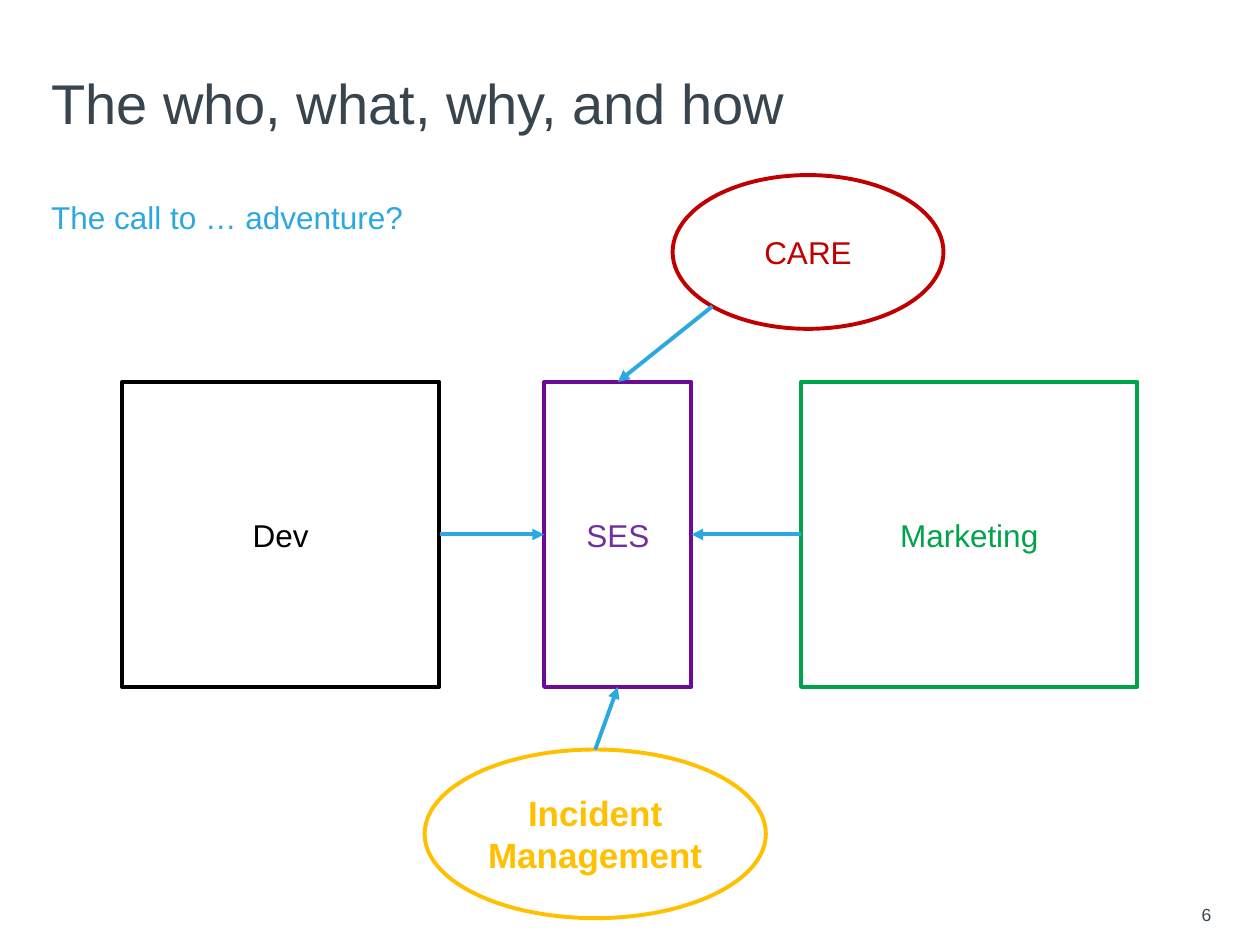
import math
from dataclasses import dataclass

from pptx import Presentation
from pptx import util as u
from pptx.dml.color import RGBColor
from pptx.enum import shapes, text
from pptx.oxml import parse_xml
from pptx.oxml.ns import nsdecls, qn


@dataclass(frozen=True)
class Theme:
    font: str = "Arial"
    ink: str = "38454F"
    accent: str = "2BA8E0"
    white: str = "FFFFFF"
    black: str = "000000"
    purple: str = "6E0A96"
    purple_text: str = "7030A0"
    green: str = "00A34A"
    red: str = "C00000"
    amber: str = "FFC000"
    title_size: int = 32
    strong_size: int = 20
    text_size: int = 18
    number_size: int = 10
    line_width: float = 2.25


THEME = Theme()
TOP, LEFT, BOTTOM, RIGHT = range(4)


def colour(value):
    return RGBColor.from_string(value)


def place(shape, box):
    shape.left, shape.top, shape.width, shape.height = (u.Cm(length) for length in box)


def write(shape, words, size, color, align, anchor, bold=False, inset=None):
    """Fill the shape with one formatted paragraph and return it."""
    frame = shape.text_frame
    frame.word_wrap = True
    frame.auto_size = text.MSO_AUTO_SIZE.NONE
    frame.vertical_anchor = anchor
    if inset is not None:
        frame.margin_left = frame.margin_top = u.Cm(inset)
        frame.margin_right = frame.margin_bottom = u.Cm(inset)
    paragraph = frame.paragraphs[0]
    paragraph.alignment = align
    run = paragraph.add_run()
    run.text = words
    run.font.name = THEME.font
    run.font.size = u.Pt(size)
    run.font.bold = bold
    run.font.color.rgb = colour(color)
    return paragraph


def add_heading(slide, box):
    """Place the title, with the subtitle under it, in the box."""
    left, top, width, height = box
    title, subtitle = slide.shapes.title, slide.placeholders[1]
    place(title, (left, top, width, 1.09))
    paragraph = write(title, "The who, what, why, and how", THEME.title_size, THEME.ink,
                      text.PP_ALIGN.LEFT, text.MSO_ANCHOR.BOTTOM, inset=0)
    paragraph.line_spacing = 0.8

    place(subtitle, (left, top + height - 0.75, width, 0.75))
    paragraph = write(subtitle, "The call to … adventure?", THEME.text_size, THEME.accent,
                      text.PP_ALIGN.LEFT, text.MSO_ANCHOR.TOP, inset=0)
    paragraph.space_before = u.Pt(0)
    properties = paragraph._p.get_or_add_pPr()
    properties.set("marL", "0")
    properties.set("indent", "0")
    properties.append(parse_xml(f"<a:buNone {nsdecls('a')}/>"))


def add_node(slide, kind, box, words, line, color=None, size=THEME.text_size, bold=False):
    node = slide.shapes.add_shape(kind, *(u.Cm(length) for length in box))
    node.shadow.inherit = False
    node.fill.solid()
    node.fill.fore_color.rgb = colour(THEME.white)
    node.line.color.rgb = colour(line)
    node.line.width = u.Pt(THEME.line_width)
    write(node, words, size, color or line, text.PP_ALIGN.CENTER,
          text.MSO_ANCHOR.MIDDLE, bold)
    return node


def add_arrow(slide, target, target_side, source=None, source_side=None, start=(0, 0)):
    """Draw an arrow to a side of target, from a side of source or a free point."""
    arrow = slide.shapes.add_connector(shapes.MSO_CONNECTOR.STRAIGHT, *start, *start)
    if source is not None:
        arrow.begin_connect(source, source_side)
    arrow.end_connect(target, target_side)
    arrow.line.color.rgb = colour(THEME.accent)
    arrow.line.width = u.Pt(THEME.line_width)
    arrow.line._get_or_add_ln().append(
        parse_xml(f'<a:tailEnd {nsdecls("a")} type="triangle"/>'))
    arrow._element.spPr.append(arrow._element.makeelement(qn("a:effectLst"), {}))


def lower_left_of(ellipse):
    """Point on the ellipse at 45 degrees below its left end."""
    reach = math.cos(math.pi / 4) / 2
    return (int(ellipse.left + ellipse.width * (0.5 - reach)),
            int(ellipse.top + ellipse.height * (0.5 + reach)))


def add_team_diagram(slide, box):
    left, top, width, height = box
    row_top, row_height = top + 4.17, 6.15
    rectangle, oval = shapes.MSO_SHAPE.RECTANGLE, shapes.MSO_SHAPE.OVAL

    ses = add_node(slide, rectangle, (left + 8.51, row_top, 2.97, row_height),
                   "SES", THEME.purple, THEME.purple_text)
    dev = add_node(slide, rectangle, (left, row_top, 6.4, row_height), "Dev", THEME.black)
    marketing = add_node(slide, rectangle, (left + width - 6.78, row_top, 6.78, row_height),
                         "Marketing", THEME.green)
    care = add_node(slide, oval, (left + 11.1, top, 5.46, 3.1), "CARE", THEME.red)
    incident = add_node(slide, oval, (left + 6.1, top + height - 3.4, 6.88, 3.4),
                        "Incident Management", THEME.amber,
                        size=THEME.strong_size, bold=True)

    add_arrow(slide, ses, LEFT, dev, RIGHT)
    add_arrow(slide, ses, RIGHT, marketing, LEFT)
    add_arrow(slide, ses, TOP, start=lower_left_of(care))
    add_arrow(slide, ses, BOTTOM, incident, TOP)


def add_page_number(slide, box):
    number = slide.shapes.add_textbox(*(u.Cm(length) for length in box))
    write(number, "6", THEME.number_size, THEME.ink,
          text.PP_ALIGN.RIGHT, text.MSO_ANCHOR.BOTTOM)


def main():
    presentation = Presentation()
    presentation.slide_width, presentation.slide_height = u.Cm(25.4), u.Cm(19.05)
    slide = presentation.slides.add_slide(presentation.slide_layouts[1])
    add_heading(slide, (1.03, 1.63, 23.68, 3.11))
    add_page_number(slide, (23.22, 17.75, 1.45, 1.02))
    add_team_diagram(slide, (2.46, 3.53, 20.47, 14.98))
    presentation.save("out.pptx")


if __name__ == "__main__":
    main()
